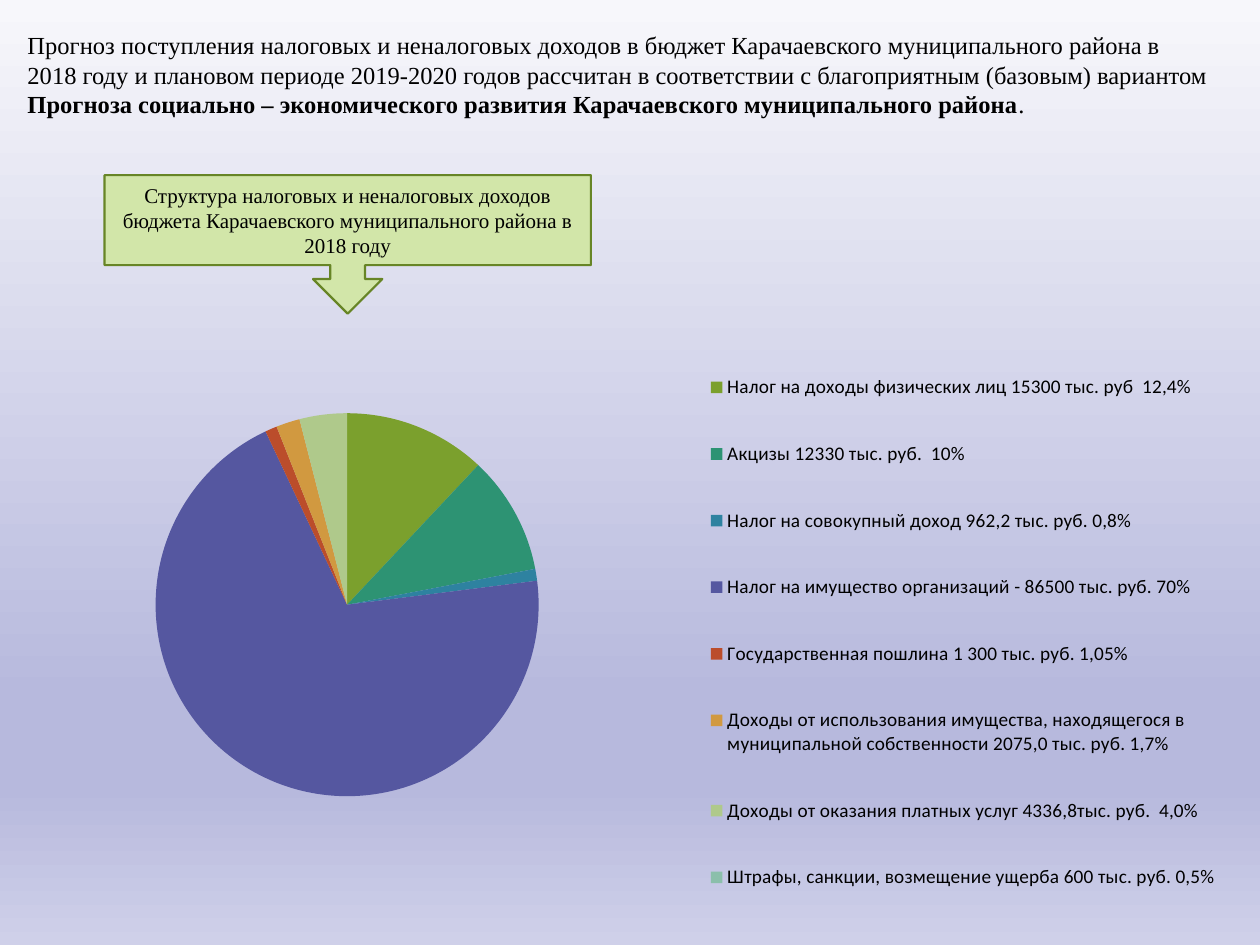
from dataclasses import dataclass

from lxml import etree
from pptx import Presentation
from pptx.chart.data import CategoryChartData
from pptx.dml.color import RGBColor
from pptx.enum import chart as charts, shapes, text
from pptx.oxml import parse_xml
from pptx.oxml.ns import nsdecls, qn
from pptx.util import Inches, Pt


@dataclass(frozen=True)
class Theme:
    serif: str = "Times New Roman"
    sans: str = "Calibri"
    ink: str = "000000"
    callout_fill: str = "D2E6A9"
    callout_line: str = "678526"
    background: tuple = ((0, "F7F7FB"), (74, "B7B9DD"), (83, "B7B9DD"), (100, "CFD0E9"))
    intro_size: int = 14
    callout_size: int = 12
    legend_size: int = 11
    chart_size: int = 18


@dataclass(frozen=True)
class Income:
    label: str
    percent: int
    color: str


@dataclass(frozen=True)
class Box:
    left: float
    top: float
    width: float
    height: float

    def inches(self) -> tuple:
        return tuple(Inches(n) for n in (self.left, self.top, self.width, self.height))


THEME = Theme()
CHART_BOX = Box(0.08, 2.38, 9.69, 5.12)
# Inside the chart, in inches from its top left corner
PIE_BOX = Box(0.07, 0.9, 5.21, 3.04)
LEGEND_BOX = Box(5.48, 0.26, 4.17, 4.76)

INTRO = (
    (("Прогноз поступления налоговых и неналоговых доходов в бюджет "
      "Карачаевского муниципального района в", False),),
    (("2018 году и плановом периоде 2019-2020 годов рассчитан в соответствии "
      "с благоприятным (базовым) вариантом", False),),
    (("Прогноза социально – экономического развития Карачаевского "
      "муниципального района", True), (".", False)),
)
CALLOUT = ("Структура налоговых и неналоговых доходов бюджета "
           "Карачаевского муниципального района в 2018 году")
INCOMES = (
    Income("Налог на доходы физических лиц 15300 тыс. руб  12,4%", 12, "7BA02D"),
    Income("Акцизы 12330 тыс. руб.  10%", 10, "2D9373"),
    Income("Налог на совокупный доход 962,2 тыс. руб. 0,8%", 1, "2E82A0"),
    Income("Налог на имущество организаций - 86500 тыс. руб. 70%", 70, "5557A0"),
    Income("Государственная пошлина 1 300 тыс. руб. 1,05%", 1, "BB4D2B"),
    Income("Доходы от использования имущества, находящегося в муниципальной "
           "собственности 2075,0 тыс. руб. 1,7%", 2, "D19940"),
    Income("Доходы от оказания платных услуг 4336,8тыс. руб.  4,0%", 4, "AFC98B"),
    Income("Штрафы, санкции, возмещение ущерба 600 тыс. руб. 0,5%", 0, "8BBFAB"),
)


def rgb(value: str) -> RGBColor:
    return RGBColor.from_string(value)


def style_font(font, name: str, size: int) -> None:
    font.name, font.size = name, Pt(size)
    font.color.rgb = rgb(THEME.ink)


def paint_background(slide) -> None:
    """Fill the slide with the vertical multi-stop gradient."""
    stops = "".join(f'<a:gs pos="{position * 1000}"><a:srgbClr val="{color}"/></a:gs>'
                    for position, color in THEME.background)
    background = parse_xml(
        f'<p:bg {nsdecls("p", "a")}><p:bgPr><a:gradFill rotWithShape="1">'
        f'<a:gsLst>{stops}</a:gsLst><a:lin ang="5400000" scaled="0"/></a:gradFill>'
        '<a:effectLst/></p:bgPr></p:bg>')
    slide.element.cSld.insert(0, background)


def add_intro(slide, box: Box) -> None:
    frame = slide.shapes.add_textbox(*box.inches()).text_frame
    frame.word_wrap = True
    for index, line in enumerate(INTRO):
        paragraph = frame.add_paragraph() if index else frame.paragraphs[0]
        style_font(paragraph.font, THEME.serif, THEME.intro_size)
        for words, bold in line:
            run = paragraph.add_run()
            run.text, run.font.bold = words, bold


def add_callout(slide, box: Box) -> None:
    shape = slide.shapes.add_shape(shapes.MSO_SHAPE.DOWN_ARROW_CALLOUT, *box.inches())
    shape.shadow.inherit = False
    shape.fill.solid()
    shape.fill.fore_color.rgb = rgb(THEME.callout_fill)
    shape.line.color.rgb = rgb(THEME.callout_line)
    shape.line.width = Pt(1.25)
    frame = shape.text_frame
    frame.word_wrap = True
    frame.vertical_anchor = text.MSO_ANCHOR.MIDDLE
    paragraph = frame.paragraphs[0]
    paragraph.text = CALLOUT
    paragraph.alignment = text.PP_ALIGN.CENTER
    style_font(paragraph.font, THEME.serif, THEME.callout_size)


def set_layout(parent, after: str, area: Box, inner: bool = False) -> None:
    """Place a chart part, turning inches into fractions of the chart."""
    for old in parent.findall(qn("c:layout")):
        parent.remove(old)
    layout = etree.Element(qn("c:layout"))
    manual = etree.SubElement(layout, qn("c:manualLayout"))
    settings = [("layoutTarget", "inner")] if inner else []
    settings += [("xMode", "edge"), ("yMode", "edge"),
                 ("x", area.left / CHART_BOX.width), ("y", area.top / CHART_BOX.height),
                 ("w", area.width / CHART_BOX.width), ("h", area.height / CHART_BOX.height)]
    for tag, value in settings:
        etree.SubElement(manual, qn(f"c:{tag}")).set("val", str(value))
    if after:
        parent.find(qn(after)).addnext(layout)
    else:
        parent.insert(0, layout)


def add_income_pie(slide) -> None:
    data = CategoryChartData()
    data.categories = [income.label for income in INCOMES]
    data.add_series("Series 1", [income.percent for income in INCOMES])
    chart = slide.shapes.add_chart(
        charts.XL_CHART_TYPE.PIE, *CHART_BOX.inches(), data).chart
    style_font(chart.font, THEME.sans, THEME.chart_size)
    chart.has_title = False
    chart.has_legend = True
    legend = chart.legend
    legend.position = charts.XL_LEGEND_POSITION.RIGHT
    legend.include_in_layout = False
    style_font(legend.font, THEME.sans, THEME.legend_size)
    plot = chart.plots[0]
    plot.vary_by_categories = True
    for index, income in enumerate(INCOMES):
        fill = plot.series[0].points[index].format.fill
        fill.solid()
        fill.fore_color.rgb = rgb(income.color)
    plot_area = chart.element.find(f".//{qn('c:plotArea')}")
    set_layout(plot_area, "", PIE_BOX, inner=True)
    legend_element = chart.element.find(f".//{qn('c:legend')}")
    set_layout(legend_element, "c:legendPos", LEGEND_BOX)


def main() -> None:
    presentation = Presentation()
    presentation.slide_width, presentation.slide_height = Inches(10), Inches(7.5)
    slide = presentation.slides.add_slide(presentation.slide_layouts[6])
    paint_background(slide)
    add_intro(slide, Box(0.12, 0.19, 9.76, 0.81))
    add_callout(slide, Box(0.83, 1.39, 3.86, 1.1))
    add_income_pie(slide)
    presentation.save("out.pptx")


if __name__ == "__main__":
    main()
